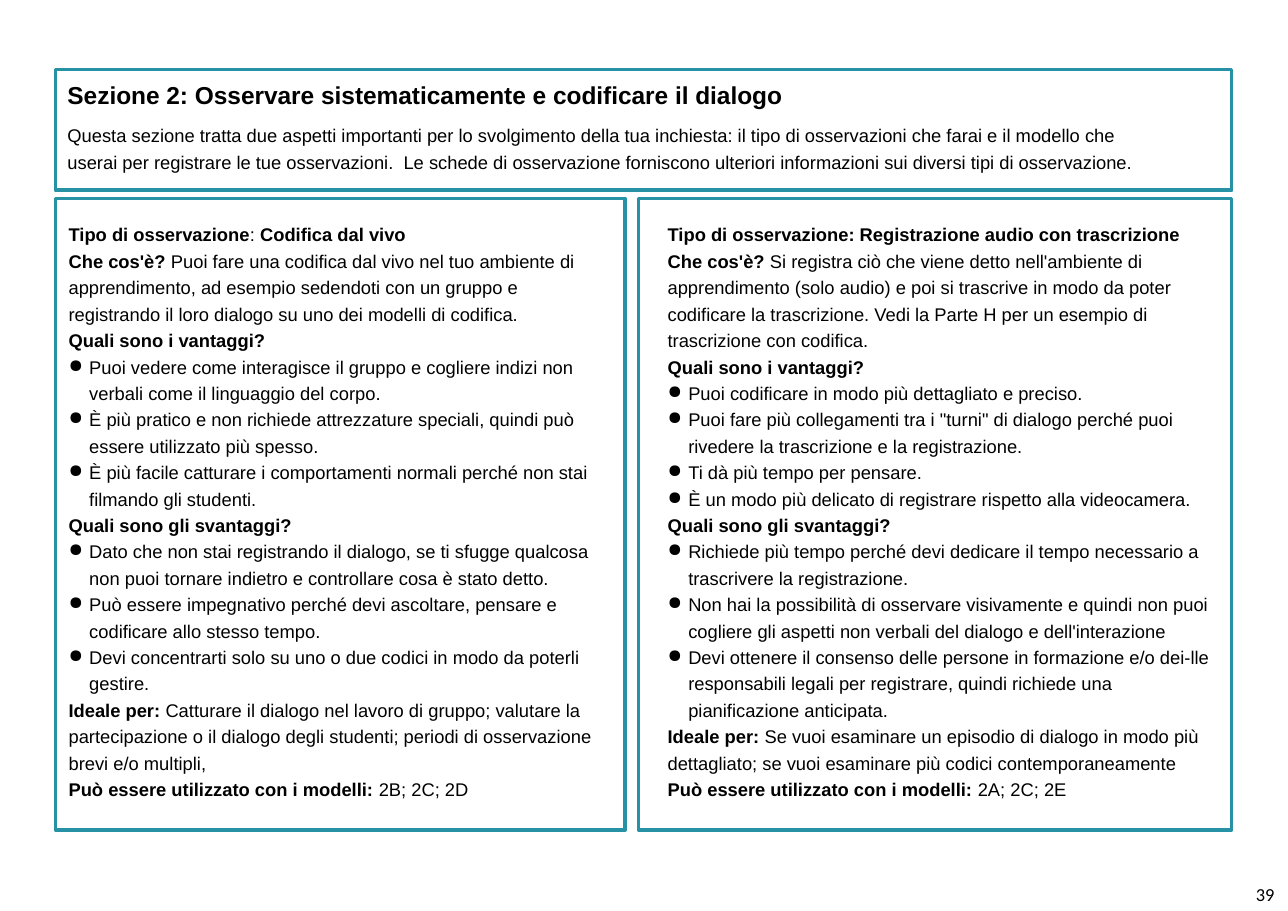
import pptx
import pptx.util
import pptx.dml.color
import pptx.enum.shapes
import pptx.enum.text
import lxml.etree

Pt = pptx.util.Pt

COLOURS = {"frame": "2791A6", "text": "000000"}

TITLE = "Sezione 2: Osservare sistematicamente e codificare il dialogo"
INTRODUCTION = (
    "Questa sezione tratta due aspetti importanti per lo svolgimento della tua inchiesta: "
    "il tipo di osservazioni che farai e il modello che userai per registrare le tue osservazioni.  "
    "Le schede di osservazione forniscono ulteriori informazioni sui diversi tipi di osservazione."
)
PAGE_NUMBER = "39"

OBSERVATION_TYPES = [
    {
        "heading": [("Tipo di osservazione", True), (": ", False), ("Codifica dal vivo", True)],
        "what": "Puoi fare una codifica dal vivo nel tuo ambiente di apprendimento, ad esempio "
                "sedendoti con un gruppo e registrando il loro dialogo su uno dei modelli di codifica.",
        "advantages": [
            "Puoi vedere come interagisce il gruppo e cogliere indizi non verbali come il linguaggio del corpo.",
            "È più pratico e non richiede attrezzature speciali, quindi può essere utilizzato più spesso.",
            "È più facile catturare i comportamenti normali perché non stai filmando gli studenti.",
        ],
        "disadvantages": [
            "Dato che non stai registrando il dialogo, se ti sfugge qualcosa non puoi tornare indietro "
            "e controllare cosa è stato detto.",
            "Può essere impegnativo perché devi ascoltare, pensare e codificare allo stesso tempo.",
            "Devi concentrarti solo su uno o due codici in modo da poterli gestire.",
        ],
        "ideal": "Catturare il dialogo nel lavoro di gruppo; valutare la partecipazione o il dialogo "
                 "degli studenti; periodi di osservazione brevi e/o multipli,",
        "templates": "2B; 2C; 2D",
    },
    {
        "heading": [("Tipo di osservazione: Registrazione audio con trascrizione", True)],
        "what": "Si registra ciò che viene detto nell'ambiente di apprendimento (solo audio) e poi si "
                "trascrive in modo da poter codificare la trascrizione. Vedi la Parte H per un esempio "
                "di trascrizione con codifica.",
        "advantages": [
            "Puoi codificare in modo più dettagliato e preciso.",
            "Puoi fare più collegamenti tra i \"turni\" di dialogo perché puoi rivedere la trascrizione "
            "e la registrazione.",
            "Ti dà più tempo per pensare.",
            "È un modo più delicato di registrare rispetto alla videocamera.",
        ],
        "disadvantages": [
            "Richiede più tempo perché devi dedicare il tempo necessario a trascrivere la registrazione.",
            "Non hai la possibilità di osservare visivamente e quindi non puoi cogliere gli aspetti "
            "non verbali del dialogo e dell'interazione",
            "Devi ottenere il consenso delle persone in formazione e/o dei-lle responsabili legali per "
            "registrare, quindi richiede una pianificazione anticipata.",
        ],
        "ideal": "Se vuoi esaminare un episodio di dialogo in modo più dettagliato; se vuoi esaminare "
                 "più codici contemporaneamente",
        "templates": "2A; 2C; 2E",
    },
]

SLIDE_WIDTH, SLIDE_HEIGHT = 841.68, 595.44
LEFT, RIGHT = 36.3, 804.8
HEADER_TOP, HEADER_BOTTOM = 45.4, 124.4
COLUMN_TOP, COLUMN_BOTTOM = 129.8, 542.5
COLUMN_TEXT_TOP, COLUMN_TEXT_HEIGHT = 143.3, 382.3
COLUMNS = [
    {"left": LEFT, "right": 408.5, "text_left": 43.9, "text_width": 351.4},
    {"left": 417.3, "right": RIGHT, "text_left": 435.4, "text_width": 360},
]
INDENT, BULLET_INDENT, BULLET_HANGING = 0.9, 14.4, 13.5


def colour(name):
    return pptx.dml.color.RGBColor.from_string(COLOURS[name])


def add_frame(slide, left, top, right, bottom):
    shape = slide.shapes.add_shape(
        pptx.enum.shapes.MSO_SHAPE.RECTANGLE, Pt(left), Pt(top), Pt(right - left), Pt(bottom - top))
    shape.shadow.inherit = False
    shape.fill.background()
    shape.line.color.rgb = colour("frame")
    shape.line.width = Pt(2.5)


def add_text_box(slide, left, top, width, height, margins=(0, 0)):
    frame = slide.shapes.add_textbox(Pt(left), Pt(top), Pt(width), Pt(height)).text_frame
    frame.word_wrap = True
    frame.auto_size = pptx.enum.text.MSO_AUTO_SIZE.NONE
    frame.margin_left = frame.margin_right = Pt(margins[0])
    frame.margin_top = frame.margin_bottom = Pt(margins[1])
    return frame


def write(frame, runs, size=12, font="Arial", spacing=1.2, before=0, indent=INDENT, bullet=False):
    first = frame.paragraphs[0]
    paragraph = frame.add_paragraph() if first.runs else first
    paragraph.line_spacing = spacing
    paragraph.space_before = Pt(before)
    properties = paragraph._p.get_or_add_pPr()
    properties.set("marL", str(Pt(BULLET_INDENT if bullet else indent)))
    properties.set("indent", str(Pt(-BULLET_HANGING if bullet else 0)))
    if bullet:
        mark = lxml.etree.SubElement(properties, pptx.oxml.ns.qn("a:buChar"))
        mark.set("char", "●")
    for text, bold in runs:
        run = paragraph.add_run()
        run.text = text
        run.font.name = font
        run.font.size = Pt(size)
        run.font.bold = bold
        run.font.color.rgb = colour("text")


def add_column(slide, column, content):
    add_frame(slide, column["left"], COLUMN_TOP, column["right"], COLUMN_BOTTOM)
    frame = add_text_box(
        slide, column["text_left"], COLUMN_TEXT_TOP, column["text_width"], COLUMN_TEXT_HEIGHT)
    write(frame, content["heading"])
    write(frame, [("Che cos'è? ", True), (content["what"], False)])
    for question, key in [("Quali sono i vantaggi?", "advantages"),
                          ("Quali sono gli svantaggi?", "disadvantages")]:
        write(frame, [(question, True)])
        for item in content[key]:
            write(frame, [(item, False)], bullet=True)
    write(frame, [("Ideale per: ", True), (content["ideal"], False)])
    write(frame, [("Può essere utilizzato con i modelli: ", True), (content["templates"], False)])


def main():
    presentation = pptx.Presentation()
    presentation.slide_width = Pt(SLIDE_WIDTH)
    presentation.slide_height = Pt(SLIDE_HEIGHT)
    slide = presentation.slides.add_slide(presentation.slide_layouts[6])

    add_frame(slide, LEFT, HEADER_TOP, RIGHT, HEADER_BOTTOM)
    header = add_text_box(slide, 43.2, 52.6, 720, 59.8)
    write(header, [(TITLE, True)], size=16, spacing=1.0)
    write(header, [(INTRODUCTION, False)], spacing=1.22, before=6.3)

    for column, content in zip(COLUMNS, OBSERVATION_TYPES):
        add_column(slide, column, content)

    number = add_text_box(slide, 813.6, 573.8, 26.6, 21.6, margins=(7.2, 3.6))
    write(number, [(PAGE_NUMBER, False)], font="Calibri", spacing=1.0, indent=0)

    presentation.save("out.pptx")


if __name__ == "__main__":
    main()
